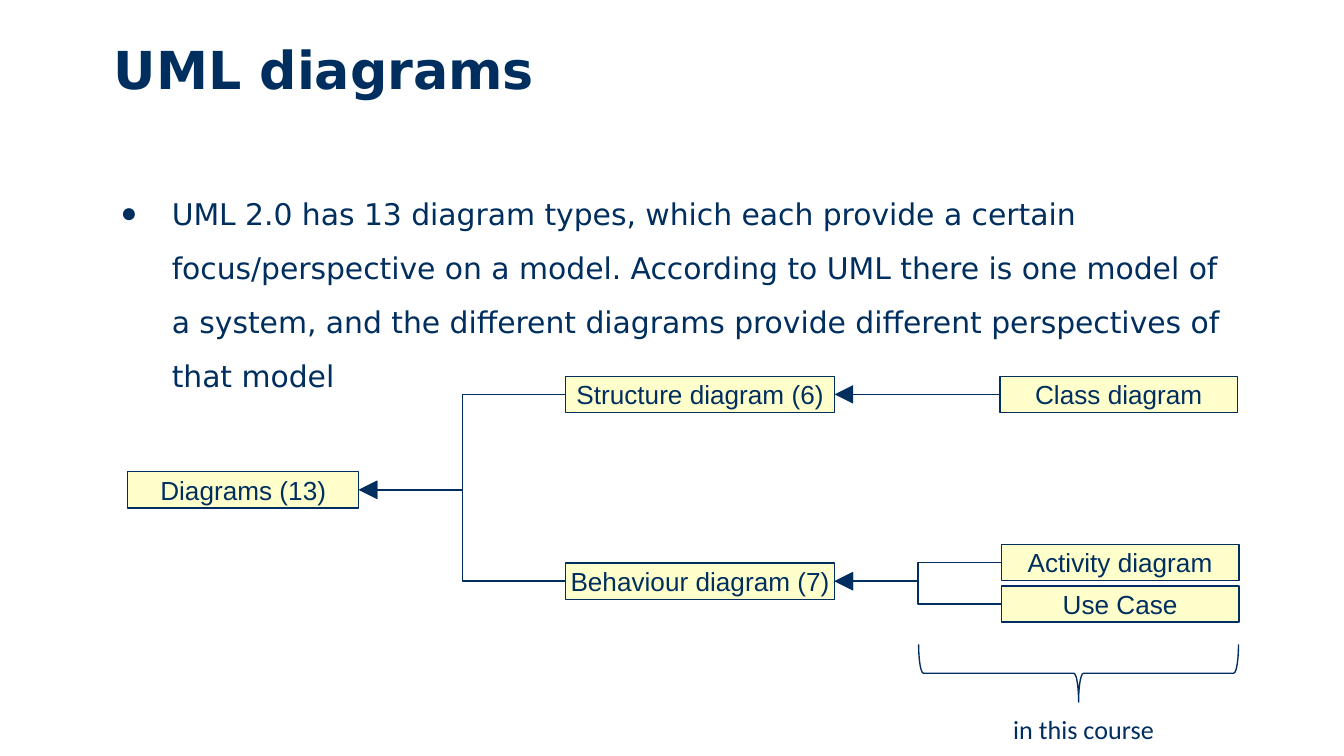
from lxml import etree
from pptx import Presentation
from pptx.dml.color import RGBColor
from pptx.enum.shapes import MSO_CONNECTOR, MSO_SHAPE
from pptx.enum.text import MSO_ANCHOR, PP_ALIGN
from pptx.oxml.ns import qn
from pptx.util import Inches, Pt

RECT, BRACE = MSO_SHAPE.RECTANGLE, MSO_SHAPE.RIGHT_BRACE
ELBOW, STRAIGHT = MSO_CONNECTOR.ELBOW, MSO_CONNECTOR.STRAIGHT
MIDDLE, CENTER = MSO_ANCHOR.MIDDLE, PP_ALIGN.CENTER
LEFT_SIDE, RIGHT_SIDE = 1, 3

WIDTH = Inches(10)
HEIGHT = WIDTH * 9 // 16
NAVY, CREAM = "002F5F", "FFFFCC"
BOX_H = 0.27
BOX_FONT = {"name": "Arial", "size": Pt(14)}
INTRO = (
    "UML 2.0 has 13 diagram types, which each provide a certain "
    "focus/perspective on a model. According to UML there is one model of "
    "a system, and the different diagrams provide different perspectives of "
    "that model"
)

# label: (left, top, width, parent)
BOXES = {
    "Diagrams (13)": (0.95, 3.51, 1.72, None),
    "Structure diagram (6)": (4.21, 2.8, 2, "Diagrams (13)"),
    "Behaviour diagram (7)": (4.21, 4.19, 2, "Diagrams (13)"),
    "Class diagram": (7.44, 2.8, 1.77, "Structure diagram (6)"),
    "Activity diagram": (7.45, 4.05, 1.77, "Behaviour diagram (7)"),
    "Use Case": (7.45, 4.36, 1.77, "Behaviour diagram (7)"),
}


def color(code):
    return RGBColor.from_string(code)


def style(item, values):
    for key, value in values.items():
        setattr(item, key, value)


def outline(item):
    item.line.color.rgb = color(NAVY)
    item.line.width = Pt(0.75)


def write(frame, text, font):
    para = frame.paragraphs[0]
    run = para.add_run()
    run.text = text
    style(run.font, font)
    run.font.color.rgb = color(NAVY)
    return para


def add_text(slide, place, text, font):
    frame = slide.shapes.add_textbox(*map(Inches, place)).text_frame
    frame.word_wrap = True
    return write(frame, text, font)


def add_bullet(para, mark, indent):
    props = para._p.get_or_add_pPr()
    props.set("marL", str(Inches(indent)))
    props.set("indent", str(-Inches(indent)))
    etree.SubElement(props, qn("a:buSzPct")).set("val", "93000")
    etree.SubElement(props, qn("a:buFont")).set("typeface", "Arial")
    etree.SubElement(props, qn("a:buChar")).set("char", mark)


def add_shape(slide, kind, place):
    shape = slide.shapes.add_shape(kind, *map(Inches, place))
    shape.shadow.inherit = False
    outline(shape)
    return shape


def add_box(slide, place, text):
    box = add_shape(slide, RECT, place)
    box.fill.solid()
    box.fill.fore_color.rgb = color(CREAM)
    frame = box.text_frame
    style(frame, {
        "word_wrap": False, "vertical_anchor": MIDDLE,
        "margin_left": Inches(0.03), "margin_right": Inches(0.03),
        "margin_top": Inches(0.01), "margin_bottom": Inches(0.01),
    })
    write(frame, text, BOX_FONT).alignment = CENTER
    return box


def add_link(slide, child, parent):
    kind = STRAIGHT if child.top == parent.top else ELBOW
    link = slide.shapes.add_connector(kind, 0, 0, 0, 0)
    link.begin_connect(child, LEFT_SIDE)
    link.end_connect(parent, RIGHT_SIDE)
    outline(link)
    head = etree.SubElement(link.line._get_or_add_ln(), qn("a:tailEnd"))
    for key, value in {"type": "triangle", "w": "lg", "len": "lg"}.items():
        head.set(key, value)
    etree.SubElement(link._element.spPr, qn("a:effectLst"))


def main():
    deck = Presentation()
    style(deck, {"slide_width": WIDTH, "slide_height": HEIGHT})
    slide = deck.slides.add_slide(deck.slide_layouts[6])

    # Title and introduction
    add_text(slide, (0.75, 0.23, 9.13, 0.94), "UML diagrams",
             {"name": "DejaVu Sans", "size": Pt(28), "bold": True})
    intro = add_text(slide, (0.8, 1.27, 8.53, 1.73), INTRO,
                     {"name": "DejaVu Sans", "size": Pt(16)})
    intro.line_spacing = Pt(29)
    add_bullet(intro, "●", 0.38)

    # Diagram tree, each box linked to its parent
    boxes = {}
    for label, (left, top, width, parent) in BOXES.items():
        boxes[label] = add_box(slide, (left, top, width, BOX_H), label)
        if parent:
            add_link(slide, boxes[label], boxes[parent])

    # Brace with its caption
    brace = add_shape(slide, BRACE, (7.81, 3.82, 0.43, 2.38))
    brace.fill.background()
    brace.rotation = 90
    add_text(slide, (7.44, 5.26, 3.51, 0.34), "in this course",
             {"name": "Calibri", "size": Pt(14)})

    deck.save("out.pptx")


if __name__ == "__main__":
    main()
